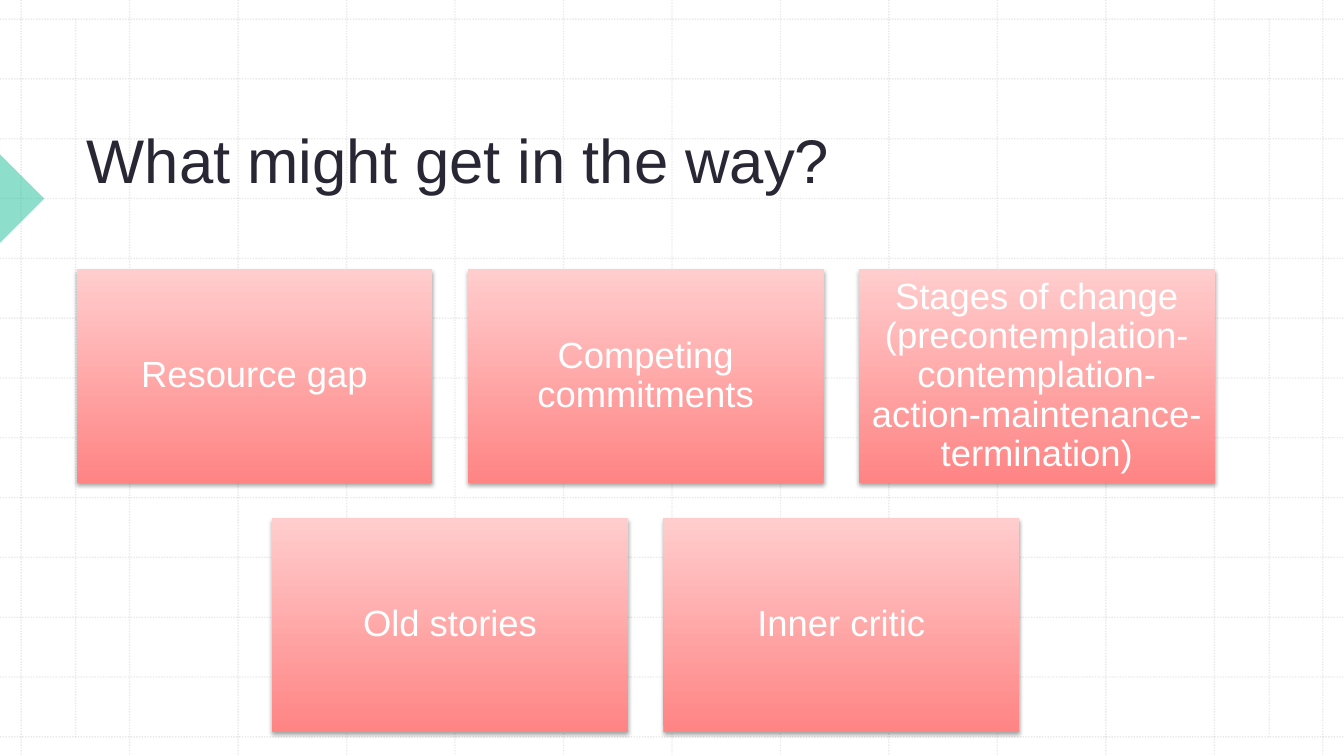
from lxml import etree
from pptx import Presentation, util as u
from pptx.dml.color import RGBColor
from pptx.enum import dml, shapes, text
from pptx.oxml.ns import qn

W, H = 13.33, 7.5
GRID = RGBColor(0xBC, 0xBC, 0xBC)
TEAL = RGBColor(0x1E, 0xBE, 0x9B)
INK = RGBColor(0x2A, 0x27, 0x35)
CORAL = RGBColor(0xFF, 0x84, 0x84)
BLUSH = RGBColor(0xFF, 0xCD, 0xCD)
WHITE = RGBColor(0xFF, 0xFF, 0xFF)
FONT = "Arial"

OBSTACLES = [
    ["Resource gap", "Competing commitments",
     "Stages of change (precontemplation-contemplation-"
     "action-maintenance-termination)"],
    ["Old stories", "Inner critic"],
]


def set_alpha(color_parent, percent):
    color = next(color_parent.iter(qn("a:srgbClr")))
    etree.SubElement(color, qn("a:alpha"), val=str(percent * 1000))


def add_run(p, words, size, color):
    r = p.add_run()
    r.text = words
    r.font.name, r.font.size, r.font.color.rgb = FONT, u.Pt(size), color


def add_grid_line(s, x1, y1, x2, y2):
    line = s.shapes.add_connector(shapes.MSO_CONNECTOR.STRAIGHT,
                                  *map(u.Inches, (x1, y1, x2, y2)))
    line.line.color.rgb = GRID
    line.line.width = u.Pt(1)
    line.line.dash_style = dml.MSO_LINE.ROUND_DOT
    sp_pr = line.element.spPr
    set_alpha(sp_pr, 30)
    etree.SubElement(sp_pr, qn("a:effectLst"))


def add_grid(s, left, top, right, bottom, cells=12):
    """Dotted lines across the whole slide, plus two content margins."""
    for i in range(cells + 1):
        x = left + (right - left) * i / cells
        y = top + (bottom - top) * i / cells
        add_grid_line(s, x, 0, x, H)
        add_grid_line(s, 0, y, W, y)
    for x in (0.75, 12.59):
        add_grid_line(s, x, top, x, bottom)


def add_marker(s, center_y, side):
    """Half square at the left edge, pointing right."""
    sp = s.shapes.add_shape(
        shapes.MSO_SHAPE.RIGHT_TRIANGLE, u.Inches(-side / 2),
        u.Inches(center_y - side / 2), u.Inches(side), u.Inches(side))
    sp.rotation = 225
    sp.shadow.inherit = False
    sp.fill.solid()
    sp.fill.fore_color.rgb = TEAL
    set_alpha(sp.element.spPr, 50)
    sp.line.fill.background()


def add_title(s, words, left, top, width, height):
    title = s.shapes.title
    s.shapes.element.append(title.element)  # in front of the grid
    title.left, title.top = u.Inches(left), u.Inches(top)
    title.width, title.height = u.Inches(width), u.Inches(height)
    tf = title.text_frame
    tf.word_wrap = True
    tf.auto_size = text.MSO_AUTO_SIZE.NONE
    tf.vertical_anchor = text.MSO_ANCHOR.MIDDLE
    p = tf.paragraphs[0]
    p.alignment = text.PP_ALIGN.LEFT
    add_run(p, words, 44, INK)


def add_card(s, words, left, top, width, height):
    sp = s.shapes.add_shape(shapes.MSO_SHAPE.RECTANGLE,
                            *map(u.Inches, (left, top, width, height)))
    sp.fill.gradient()
    sp.fill.gradient_angle = 90
    for stop, color in zip(sp.fill.gradient_stops, (CORAL, BLUSH)):
        stop.color.rgb = color
    sp.line.fill.background()

    # Soft shadow below the card
    sp.shadow.inherit = False
    effects = sp.element.spPr.find(qn("a:effectLst"))
    shadow = etree.SubElement(
        effects, qn("a:outerShdw"), blurRad=str(u.Pt(3.1)),
        dist=str(u.Pt(1.8)), dir="5400000", rotWithShape="0")
    etree.SubElement(shadow, qn("a:srgbClr"), val="000000")
    set_alpha(shadow, 35)

    tf = sp.text_frame
    tf.word_wrap = True
    tf.vertical_anchor = text.MSO_ANCHOR.MIDDLE
    tf.margin_left = tf.margin_right = u.Inches(0.11)
    tf.margin_top = tf.margin_bottom = u.Inches(0.11)
    p = tf.paragraphs[0]
    p.alignment = text.PP_ALIGN.CENTER
    p.line_spacing = 0.9
    add_run(p, words, 26, WHITE)


def add_cards(s, rows, left, top, width, card_w=3.53, card_h=2.12, gap=0.35):
    """Rows of equal cards, each row centred in the given width."""
    for i, row in enumerate(rows):
        row_w = len(row) * (card_w + gap) - gap
        start = left + (width - row_w) / 2
        for j, words in enumerate(row):
            add_card(s, words, start + j * (card_w + gap),
                     top + i * (card_h + gap), card_w, card_h)


def main():
    prs = Presentation()
    prs.slide_width, prs.slide_height = u.Inches(W), u.Inches(H)
    s = prs.slides.add_slide(prs.slide_layouts[5])
    s.background.fill.solid()
    s.background.fill.fore_color.rgb = WHITE
    add_grid(s, 0.21, 0.19, 13.12, 7.31)
    add_marker(s, 1.97, 0.62)
    add_title(s, "What might get in the way?", 0.76, 0.79, 11.29, 1.58)
    add_cards(s, OBSTACLES, 0.76, 2.67, 11.29)
    prs.save("out.pptx")


if __name__ == "__main__":
    main()
